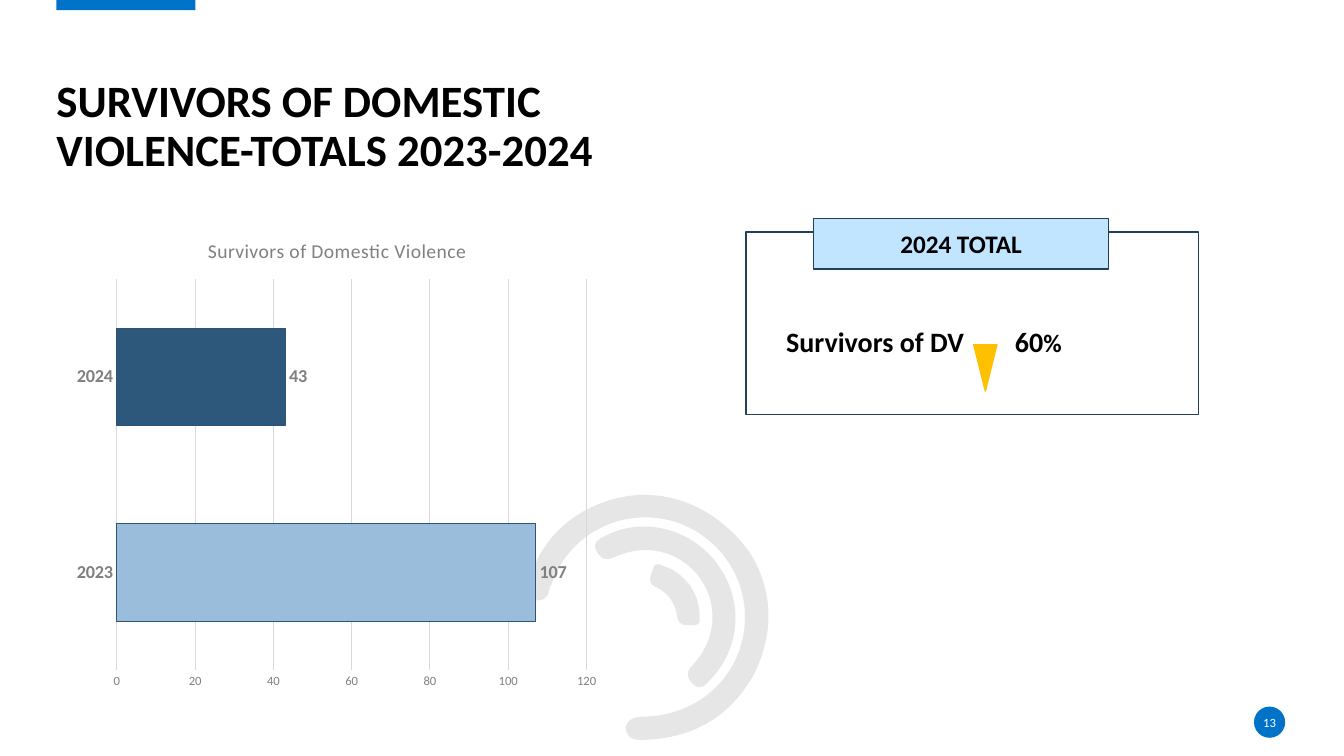
from lxml import etree
from pptx import Presentation
from pptx.chart.data import CategoryChartData
from pptx.dml.color import RGBColor
from pptx.enum.chart import XL_CHART_TYPE, XL_LABEL_POSITION, XL_TICK_MARK
from pptx.enum.shapes import MSO_SHAPE
from pptx.enum.text import MSO_ANCHOR, PP_ALIGN
from pptx.oxml.ns import qn
from pptx.util import Emu, Pt

RECTANGLE, OVAL, TRIANGLE = MSO_SHAPE.RECTANGLE, MSO_SHAPE.OVAL, MSO_SHAPE.ISOSCELES_TRIANGLE
LEFT, CENTER = PP_ALIGN.LEFT, PP_ALIGN.CENTER
TOP, MIDDLE = MSO_ANCHOR.TOP, MSO_ANCHOR.MIDDLE
NO_TICKS = XL_TICK_MARK.NONE
PX = 9144  # 100 px to the inch

THEME = {
    "font": "Calibri",
    "accent": "0072C7", "ring": "E7E6E6", "white": "FFFFFF", "black": "000000",
    "outline": "21405A", "tag": "C1E4FF", "arrow": "FFC000",
    "gray": "808080", "grid": "D9D9D9", "bar_line": "2B5477",
    "bars": ["9ABDDB", "2D587C"],
    "title": 32, "body": 20, "label": 18, "chart_title": 14, "category": 13, "small": 9,
}


def style_shape(shape, fill, line=None):
    shape.shadow.inherit = False
    shape.fill.solid()
    shape.fill.fore_color.rgb = RGBColor.from_string(THEME[fill])
    if line:
        shape.line.color.rgb = RGBColor.from_string(THEME[line])
        shape.line.width = Pt(1)
    else:
        shape.line.fill.background()


def style_font(font, size, color, bold=False):
    font.name = THEME["font"]
    font.size = Pt(THEME[size])
    font.bold = bold
    font.color.rgb = RGBColor.from_string(THEME[color])


presentation = Presentation()
presentation.slide_width, presentation.slide_height = Emu(4000 * PX // 3), Emu(750 * PX)
slide = presentation.slides.add_slide(presentation.slide_layouts[6])
shapes = slide.shapes

# Background rings: a start point, then three points for each Bezier curve
rings = [
    [(743, 547), (765, 581), (770, 623), (749, 667), (726, 710), (689, 732), (640, 734),
     (634, 734), (627, 735), (623, 729), (617, 720), (624, 711), (637, 711),
     (693, 711), (737, 670), (739, 616), (741, 567), (706, 524), (659, 515),
     (610, 506), (563, 533), (547, 580), (546, 581), (545, 583), (545, 585),
     (543, 594), (538, 597), (529, 595), (519, 592), (521, 584), (524, 578),
     (535, 540), (560, 513), (597, 499), (649, 479), (706, 497), (743, 547)],
    [(712, 560), (738, 596), (735, 642), (705, 674), (700, 679), (695, 686), (688, 679),
     (681, 672), (680, 667), (688, 659), (711, 634), (713, 599), (694, 573),
     (675, 547), (641, 538), (609, 553), (600, 557), (596, 554), (592, 547),
     (587, 538), (594, 535), (600, 532), (637, 512), (686, 524), (712, 560)],
    [(684, 580), (690, 589), (694, 599), (694, 610), (694, 614), (696, 620), (689, 620),
     (682, 620), (673, 622), (672, 612), (670, 598), (663, 588), (650, 582),
     (641, 578), (646, 570), (648, 564), (650, 557), (655, 560), (659, 562),
     (670, 565), (677, 572), (684, 580)],
]
for ring in rings:
    builder = shapes.build_freeform(*ring[0], scale=PX)
    builder.add_line_segments(ring[1:], close=True)
    shape = builder.convert_to_shape()
    style_shape(shape, "ring")
    # Turn each run of three line segments into one curve
    segments = list(shape._element.iter(qn("a:lnTo")))
    for first in range(0, len(segments), 3):
        curve = etree.Element(qn("a:cubicBezTo"))
        segments[first].addprevious(curve)
        for segment in segments[first:first + 3]:
            curve.append(segment[0])
            segment.getparent().remove(segment)

# Top bar, page badge, total panel with its tag, and down arrow
blocks = [
    (RECTANGLE, (56, -2, 138, 12), "accent", None, "", None, False),
    (OVAL, (1244, 701, 31, 31), "accent", None, "13", ("small", "white"), False),
    (RECTANGLE, (740, 230, 449, 181), "white", "outline", "", None, False),
    (RECTANGLE, (807, 217, 293, 50), "tag", "outline", "2024 TOTAL", ("label", "black"), True),
    (TRIANGLE, (966, 342, 23, 46), "arrow", "arrow", "", None, False),
]
for kind, box, fill, line, text, text_style, bold in blocks:
    shape = shapes.add_shape(kind, *(Emu(length * PX) for length in box))
    style_shape(shape, fill, line)
    if kind == TRIANGLE:
        shape.rotation = 180
    if text:
        frame = shape.text_frame
        frame.margin_left = frame.margin_right = frame.margin_top = frame.margin_bottom = 0
        frame.vertical_anchor = MIDDLE
        frame.word_wrap = True
        frame.text = text
        frame.paragraphs[0].alignment = CENTER
        style_font(frame.paragraphs[0].runs[0].font, *text_style, bold)

# Title and survivor change
texts = [
    ((56, 54, 540, 145), MIDDLE, 0, 0.9,
     [("SURVIVORS OF DOMESTIC VIOLENCE-TOTALS 2023-2024", "title")]),
    ((770, 300, 421, 128), TOP, 1, None,
     [("Survivors of DV", "body"), ("\t", "title"), ("60", "body"), ("%", "label")]),
]
for box, anchor, inset, spacing, runs in texts:
    frame = shapes.add_textbox(*(Emu(length * PX) for length in box)).text_frame
    frame.word_wrap = True
    frame.vertical_anchor = anchor
    frame.margin_left = frame.margin_right = Emu(10 * inset * PX)
    frame.margin_top = frame.margin_bottom = Emu(5 * inset * PX)
    paragraph = frame.paragraphs[0]
    paragraph.alignment = LEFT
    if spacing:
        paragraph.line_spacing = spacing
    else:
        tabs = etree.SubElement(paragraph._p.get_or_add_pPr(), qn("a:tabLst"))
        etree.SubElement(tabs, qn("a:tab"), pos=str(227 * PX), algn="l")
    for text, size in runs:
        run = paragraph.add_run()
        run.text = text
        style_font(run.font, size, "black", True)

# Bar chart
chart_title = "Survivors of Domestic Violence"
chart_data = CategoryChartData()
chart_data.categories = ["2023", "2024"]
chart_data.add_series(chart_title, (107, 43))
chart_box = (66, 217, 537, 476)
chart = shapes.add_chart(XL_CHART_TYPE.BAR_CLUSTERED,
                         *(Emu(length * PX) for length in chart_box), chart_data).chart
chart.has_legend = False
style_font(chart.font, "small", "gray")
chart.has_title = True
chart.chart_title.include_in_layout = False
chart.chart_title.text_frame.text = chart_title
title_run = chart.chart_title.text_frame.paragraphs[0].runs[0]
style_font(title_run.font, "chart_title", "gray")
title_run._r.get_or_add_rPr().set("spc", "20")

plot = chart.plots[0]
plot.gap_width = 100
plot.vary_by_categories = False
series = plot.series[0]
series.invert_if_negative = False
for index, color in enumerate(THEME["bars"]):
    bar = series.points[index].format
    bar.fill.solid()
    bar.fill.fore_color.rgb = RGBColor.from_string(color)
    bar.line.color.rgb = RGBColor.from_string(THEME["bar_line"])
    bar.line.width = Pt(0.75)
labels = series.data_labels
labels.show_value = True
labels.position = XL_LABEL_POSITION.OUTSIDE_END
style_font(labels.font, "category", "gray", True)

# Axes
category_axis, value_axis = chart.category_axis, chart.value_axis
for axis, size, bold in ((category_axis, "category", True), (value_axis, "small", False)):
    axis.major_tick_mark = axis.minor_tick_mark = NO_TICKS
    style_font(axis.tick_labels.font, size, "gray", bold)
value_axis.minimum_scale, value_axis.maximum_scale, value_axis.major_unit = 0, 120, 20
value_axis.has_major_gridlines = True
value_axis.format.line.fill.background()
for line in (category_axis.format.line, value_axis.major_gridlines.format.line):
    line.color.rgb = RGBColor.from_string(THEME["grid"])
    line.width = Pt(0.75)

# Plot area position, as shares of the chart
plot_area = chart._chartSpace.chart.plotArea
for layout in plot_area.findall(qn("c:layout")):
    plot_area.remove(layout)
layout = etree.Element(qn("c:layout"))
plot_area.insert(0, layout)
manual = etree.SubElement(layout, qn("c:manualLayout"))
for tag, value in (("layoutTarget", "inner"), ("xMode", "edge"), ("yMode", "edge")):
    etree.SubElement(manual, qn("c:" + tag), val=value)
plot_box = (50, 60, 466, 388)
for tag, length, whole in zip("xywh", plot_box, chart_box[2:] * 2):
    etree.SubElement(manual, qn("c:" + tag), val=str(length / whole))

presentation.save("out.pptx")
